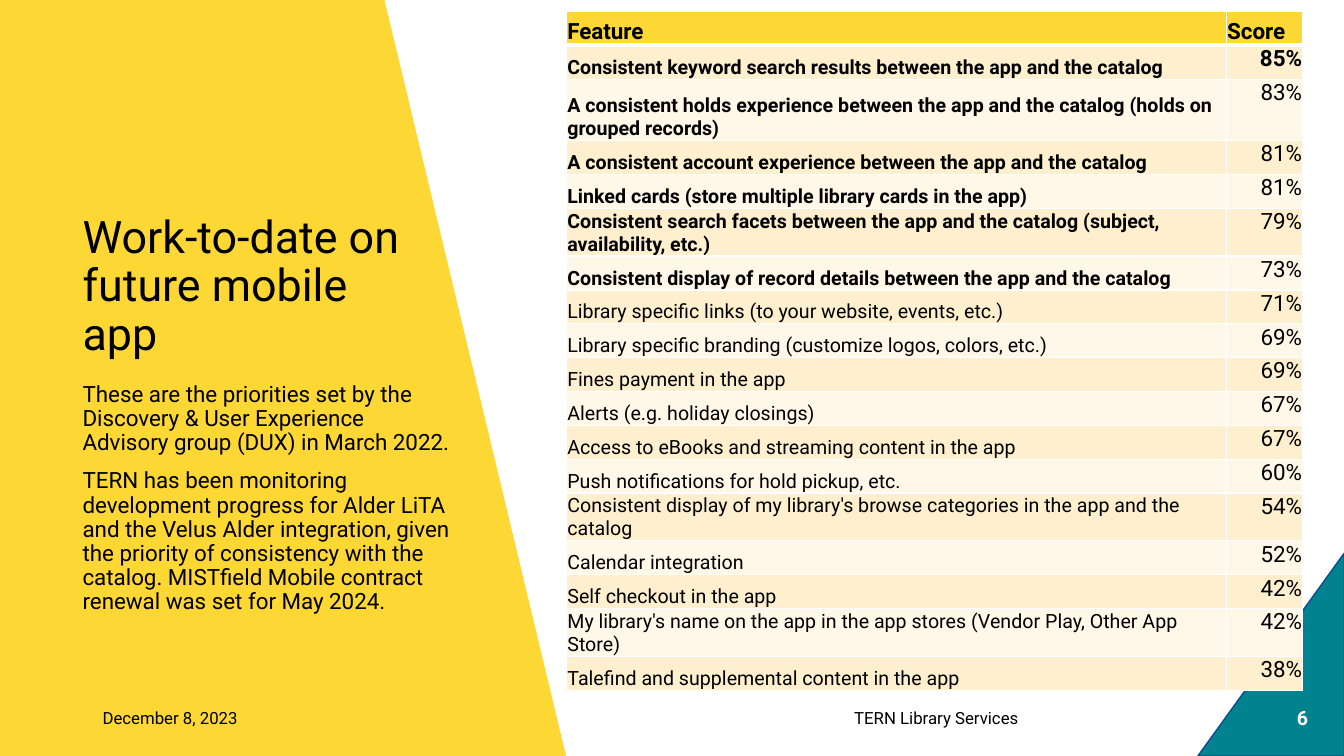
from lxml import etree
from pptx import Presentation
from pptx.dml.color import RGBColor
from pptx.enum.shapes import MSO_SHAPE
from pptx.enum.text import MSO_ANCHOR, MSO_AUTO_SIZE, PP_ALIGN
from pptx.oxml.ns import qn
from pptx.util import Pt

RIGHT_TRIANGLE = MSO_SHAPE.RIGHT_TRIANGLE
TOP, MIDDLE, BOTTOM = MSO_ANCHOR.TOP, MSO_ANCHOR.MIDDLE, MSO_ANCHOR.BOTTOM
LEFT, CENTER, RIGHT = PP_ALIGN.LEFT, PP_ALIGN.CENTER, PP_ALIGN.RIGHT
NO_AUTOFIT = MSO_AUTO_SIZE.NONE

BLACK = RGBColor(0x00, 0x00, 0x00)
WHITE = RGBColor(0xFF, 0xFF, 0xFF)
YELLOW = RGBColor(0xFD, 0xD8, 0x35)
CREAM = RGBColor(0xFE, 0xF0, 0xCE)
IVORY = RGBColor(0xFF, 0xF8, 0xE8)
TEAL = RGBColor(0x00, 0x83, 0x8E)
NAVY = RGBColor(0x10, 0x4B, 0x8E)
FONT = "Roboto"

SLIDE_WIDTH, SLIDE_HEIGHT = 960, 540
ROW_HEIGHT, TALL_ROW_HEIGHT = 24.2, 43.9
TALL_ROW = 2
SCORE_WIDTH = 54.5
PRIORITY_COUNT = 6

TITLE = "Work-to-date on future mobile app"
BACKGROUND = [
    "These are the priorities set by the Discovery & User Experience "
    "Advisory group (DUX) in March 2022.",
    "TERN has been monitoring development progress for Alder "
    "LiTA and the Velus Alder integration, given the priority of consistency "
    "with the catalog. MISTfield Mobile contract renewal was set for May 2024.",
]
FEATURES = [
    ("Consistent keyword search results between the app and the catalog", 85),
    ("A consistent holds experience between the app and the catalog (holds on grouped records)", 83),
    ("A consistent account experience between the app and the catalog", 81),
    ("Linked cards (store multiple library cards in the app)", 81),
    ("Consistent search facets between the app and the catalog (subject, availability, etc.)", 79),
    ("Consistent display of record details between the app and the catalog", 73),
    ("Library specific links (to your website, events, etc.)", 71),
    ("Library specific branding (customize logos, colors, etc.)", 69),
    ("Fines payment in the app", 69),
    ("Alerts (e.g. holiday closings)", 67),
    ("Access to eBooks and streaming content in the app", 67),
    ("Push notifications for hold pickup, etc.", 60),
    ("Consistent display of my library's browse categories in the app and the catalog", 54),
    ("Calendar integration", 52),
    ("Self checkout in the app", 42),
    ("My library's name on the app in the app stores (Vendor Play, Other App Store)", 42),
    ("Talefind and supplemental content in the app", 38),
]


def write(frame, *lines, size, color=BLACK, bold=False, align=LEFT,
          anchor=TOP, spacing=1.0, before=0, after=0):
    frame.word_wrap = True
    frame.vertical_anchor = anchor
    for index, line in enumerate(lines):
        paragraph = frame.add_paragraph() if index else frame.paragraphs[0]
        paragraph.alignment = align
        paragraph.line_spacing = spacing
        paragraph.space_before = Pt(before)
        paragraph.space_after = Pt(after)
        run = paragraph.add_run()
        run.text = line
        run.font.name = FONT
        run.font.size = Pt(size)
        run.font.bold = bold
        run.font.color.rgb = color


def place(shape, left, top, width, height):
    shape.left, shape.top = Pt(left), Pt(top)
    shape.width, shape.height = Pt(width), Pt(height)


def add_backdrop(slide, width, height):
    corners = [(-7.2, height + 13), (-7.2, -17), (270, -19.4), (408.2, height + 16)]
    start, *others = [(Pt(x), Pt(y)) for x, y in corners]
    builder = slide.shapes.build_freeform(*start, scale=1.0)
    builder.add_line_segments(others, close=True)
    panel = builder.convert_to_shape()
    panel.fill.solid()
    panel.fill.fore_color.rgb = YELLOW
    panel.line.fill.background()

    long_side, short_side = 144.7, 104.4
    left = width - (short_side + long_side) / 2
    top = height - (long_side + short_side) / 2
    corner = slide.shapes.add_shape(
        RIGHT_TRIANGLE, Pt(left), Pt(top), Pt(long_side), Pt(short_side))
    corner.rotation = 270
    corner.fill.solid()
    corner.fill.fore_color.rgb = TEAL
    corner.line.color.rgb = NAVY
    corner.line.width = Pt(1)

    for backdrop in (corner, panel):
        backdrop.shadow.inherit = False
        slide.shapes.title.element.addprevious(backdrop.element)


def add_summary(slide, left, top):
    title, body = slide.shapes.title, slide.placeholders[1]
    place(title, left, top, 244.8, 126)
    place(body, left, top + 135.4, 280.8, 192)
    for holder in (title, body):
        holder.text_frame.auto_size = NO_AUTOFIT
    write(title.text_frame, TITLE, size=32, anchor=BOTTOM, spacing=0.9)
    write(body.text_frame, *BACKGROUND, size=16, spacing=0.9, before=10)
    for paragraph in body.text_frame.paragraphs:
        properties = paragraph._p.get_or_add_pPr()
        properties.set("marL", "0")
        properties.set("indent", "0")
        etree.SubElement(properties, qn("a:buNone"))


def set_borders(cell, bottom_width):
    properties = cell._tc.get_or_add_tcPr()
    widths = {"a:lnL": 1, "a:lnR": 1, "a:lnT": 1, "a:lnB": bottom_width}
    for position, (tag, width) in enumerate(widths.items()):
        border = etree.Element(qn(tag), w=str(Pt(width)))
        fill = etree.SubElement(border, qn("a:solidFill"))
        etree.SubElement(fill, qn("a:srgbClr"), val=str(WHITE))
        properties.insert(position, border)


def fill_cell(cell, text, fill, cell_anchor, border=1, **text_format):
    cell.margin_left = cell.margin_right = cell.margin_top = Pt(0.5)
    cell.margin_bottom = Pt(0)
    cell.fill.solid()
    cell.fill.fore_color.rgb = fill
    set_borders(cell, border)
    cell.vertical_anchor = cell_anchor
    write(cell.text_frame, text, **text_format)


def add_scores(slide, left, top, width):
    count = len(FEATURES) + 1
    height = ROW_HEIGHT * (count - 1) + TALL_ROW_HEIGHT
    table = slide.shapes.add_table(
        count, 2, Pt(left), Pt(top), Pt(width), Pt(height)).table
    table.columns[0].width = Pt(width - SCORE_WIDTH)
    table.columns[1].width = Pt(SCORE_WIDTH)
    for index, row in enumerate(table.rows):
        row.height = Pt(TALL_ROW_HEIGHT if index == TALL_ROW else ROW_HEIGHT)
    for column, heading in enumerate(("Feature", "Score")):
        fill_cell(table.cell(0, column), heading, YELLOW, BOTTOM, border=3,
                  size=16, bold=True)
    for index, (feature, score) in enumerate(FEATURES, start=1):
        band = CREAM if index % 2 else IVORY
        fill_cell(table.cell(index, 0), feature, band, BOTTOM, size=14,
                  bold=index <= PRIORITY_COUNT)
        fill_cell(table.cell(index, 1), f"{score}%", band, TOP, size=16,
                  bold=index == 1, align=RIGHT)


def add_footer(slide, top, height):
    entries = [
        ("TERN Library Services", 506.9, 324, {"size": 12, "align": CENTER}),
        ("6", 909.4, 41.8,
         {"size": 14, "align": CENTER, "bold": True, "color": WHITE}),
        ("December 8, 2023", 66.2, 216, {"size": 12}),
    ]
    for text, left, width, text_format in entries:
        entry = slide.shapes.add_textbox(Pt(left), Pt(top), Pt(width), Pt(height))
        write(entry.text_frame, text, anchor=MIDDLE, after=6, **text_format)


def main():
    deck = Presentation()
    deck.slide_width, deck.slide_height = Pt(SLIDE_WIDTH), Pt(SLIDE_HEIGHT)
    slide = deck.slides.add_slide(deck.slide_layouts[1])
    add_backdrop(slide, SLIDE_WIDTH, SLIDE_HEIGHT)
    add_summary(slide, 51.8, 134.6)
    add_footer(slide, 498.5, 28.8)
    add_scores(slide, 404.8, 8.2, 525.8)
    deck.save("out.pptx")


if __name__ == "__main__":
    main()
